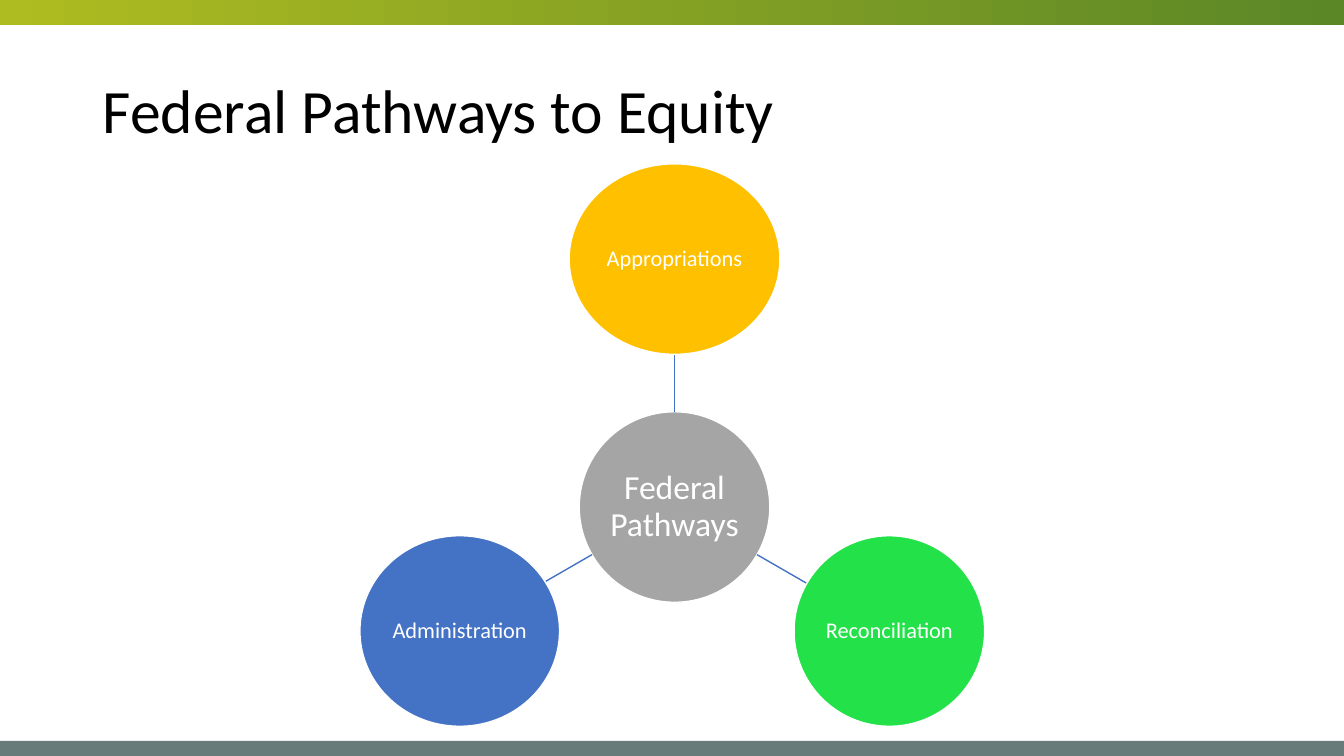
from dataclasses import dataclass
from math import cos, hypot, radians, sin

from lxml.etree import SubElement
from pptx import Presentation
from pptx.dml.color import RGBColor
from pptx.enum.shapes import MSO_CONNECTOR, MSO_SHAPE
from pptx.enum.text import MSO_ANCHOR, PP_ALIGN
from pptx.oxml.ns import qn
from pptx.util import Inches, Pt


@dataclass(frozen=True)
class Theme:
    """Colours, font and type sizes of the slide."""
    font: str = "Calibri"
    title_size: int = 44
    hub_size: int = 24
    pathway_size: int = 16
    ink: str = "000000"
    white: str = "FFFFFF"
    bar_start: str = "AFBC21"
    bar_end: str = "5B8727"
    footer: str = "667B7A"
    hub: str = "A5A5A5"
    gold: str = "FFC000"
    green: str = "23E148"
    blue: str = "4472C4"


THEME = Theme()
SLIDE_WIDTH, SLIDE_HEIGHT = 13.33, 7.5
HUB_CENTER = (6.69, 5.03)
CIRCLE = 1.89
SPOKE = 2.46
# label, angle in degrees, width, colour
PATHWAYS = [
    ("Appropriations", -90, 2.09, THEME.gold),
    ("Reconciliation", 30, CIRCLE, THEME.green),
    ("Administration", 150, 1.98, THEME.blue),
]


def set_format(target, values):
    """Set every attribute named in values on target."""
    for name, value in values.items():
        setattr(target, name, value)


def paint(fill, color):
    """Give a fill one solid colour."""
    fill.solid()
    fill.fore_color.rgb = RGBColor.from_string(color)


def write_text(shape, text, size, color, align, margin):
    """Write one vertically centred paragraph into a shape."""
    frame = shape.text_frame
    margins = dict.fromkeys(
        ("margin_left", "margin_right", "margin_top", "margin_bottom"), Inches(margin))
    set_format(frame, {"word_wrap": True, "vertical_anchor": MSO_ANCHOR.MIDDLE, **margins})
    para = frame.paragraphs[0]
    set_format(para, {"alignment": align, "line_spacing": 0.9})
    span = para.add_run()
    span.text = text
    set_format(span.font, {"name": THEME.font, "size": Pt(size)})
    span.font.color.rgb = RGBColor.from_string(color)


def add_bar(slide, top, height):
    """Add a full-width bar without outline, ready to be filled."""
    bar = slide.shapes.add_shape(
        MSO_SHAPE.RECTANGLE, 0, Inches(top), Inches(SLIDE_WIDTH), Inches(height))
    bar.shadow.inherit = False
    bar.line.fill.background()
    return bar


def add_gradient_bar(slide, top, height):
    """Add a bar that fades from left to right."""
    fill = add_bar(slide, top, height).fill
    fill.gradient()
    fill.gradient_angle = 0
    for stop, color in zip(fill.gradient_stops, (THEME.bar_start, THEME.bar_end)):
        stop.color.rgb = RGBColor.from_string(color)


def add_title(slide, text):
    """Place and fill the title placeholder."""
    title = slide.shapes.title
    set_format(title, {"left": Inches(0.92), "top": Inches(0.4),
                       "width": Inches(11.5), "height": Inches(1.45)})
    write_text(title, text, THEME.title_size, THEME.ink, PP_ALIGN.LEFT, 0.1)


def add_circle(slide, center, width, color, text, size):
    """Add a labelled ellipse around a centre point."""
    x, y = center
    circle = slide.shapes.add_shape(
        MSO_SHAPE.OVAL, Inches(x - width / 2), Inches(y - CIRCLE / 2),
        Inches(width), Inches(CIRCLE))
    circle.shadow.inherit = False
    paint(circle.fill, color)
    paint(circle.line.fill, THEME.white)
    circle.line.width = Pt(1)
    write_text(circle, text, size, THEME.white, PP_ALIGN.CENTER, 0.01)


def point_at(angle, distance):
    """Return the point at an angle and distance from the hub centre."""
    x, y = HUB_CENTER
    return x + distance * cos(radians(angle)), y + distance * sin(radians(angle))


def edge_distance(angle, width):
    """Return the distance from an ellipse's centre to its edge."""
    return 1 / hypot(cos(radians(angle)) / (width / 2), sin(radians(angle)) / (CIRCLE / 2))


def add_spoke(slide, angle, width):
    """Join the hub's edge to the edge of a pathway circle."""
    start = point_at(angle, edge_distance(angle, CIRCLE))
    end = point_at(angle, SPOKE - edge_distance(angle, width))
    spoke = slide.shapes.add_connector(
        MSO_CONNECTOR.STRAIGHT, *(Inches(value) for value in start + end))
    paint(spoke.line.fill, THEME.blue)
    spoke.line.width = Pt(1)
    SubElement(spoke._element.spPr, qn("a:effectLst"))


def main():
    """Build and save the slide."""
    deck = Presentation()
    set_format(deck, {"slide_width": Inches(SLIDE_WIDTH), "slide_height": Inches(SLIDE_HEIGHT)})
    slide = deck.slides.add_slide(deck.slide_layouts[5])
    add_gradient_bar(slide, -0.01, 0.26)
    paint(add_bar(slide, 7.35, 0.16).fill, THEME.footer)
    add_title(slide, "Federal Pathways to Equity")
    add_circle(slide, HUB_CENTER, CIRCLE, THEME.hub, "Federal Pathways", THEME.hub_size)
    for label, angle, width, color in PATHWAYS:
        add_spoke(slide, angle, width)
        add_circle(slide, point_at(angle, SPOKE), width, color, label, THEME.pathway_size)
    deck.save("out.pptx")


main()
